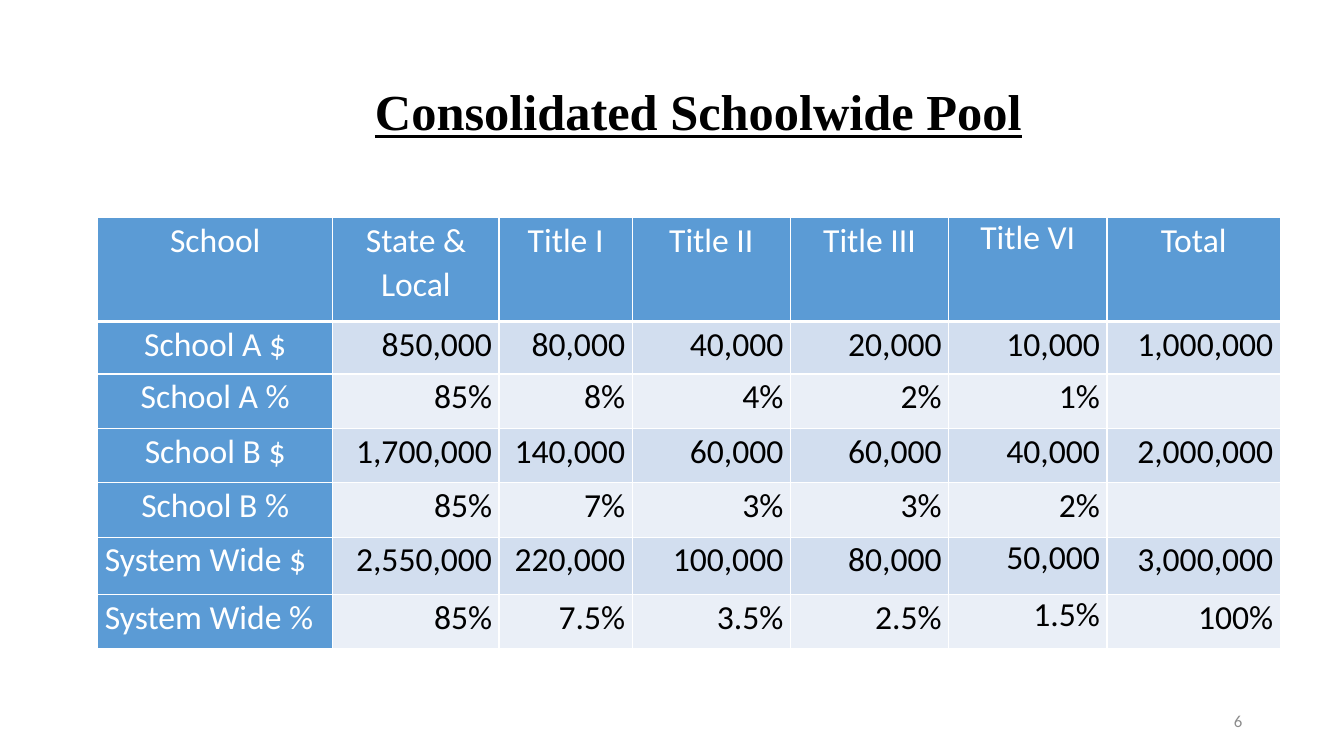
import dataclasses

import lxml.etree
import pptx
import pptx.dml.color
import pptx.enum.text
import pptx.oxml.ns
import pptx.util

Inches = pptx.util.Inches
Pt = pptx.util.Pt
Align = pptx.enum.text.PP_ALIGN
Anchor = pptx.enum.text.MSO_ANCHOR

BLUE, WHITE, BLACK = "5B9BD5", "FFFFFF", "000000"
BANDS = ("D2DEEF", "EAEFF7")
WIDTHS = (2.33, 1.65, 1.32, 1.57, 1.57, 1.57, 1.72)
HEIGHTS = (1.03, 0.52, 0.54, 0.54, 0.54, 0.57, 0.54)
ROWS = (
    ("School", "State & Local", "Title I", "Title II", "Title III", "Title VI", "Total"),
    ("School A $", "850,000", "80,000", "40,000", "20,000", "10,000", "1,000,000"),
    ("School A %", "85%", "8%", "4%", "2%", "1%", ""),
    ("School B $", "1,700,000", "140,000", "60,000", "60,000", "40,000", "2,000,000"),
    ("School B %", "85%", "7%", "3%", "3%", "2%", ""),
    ("System Wide $", "2,550,000", "220,000", "100,000", "80,000", "50,000", "3,000,000"),
    ("System Wide %", "85%", "7.5%", "3.5%", "2.5%", "1.5%", "100%"),
)
# Cells set with single line spacing
TIGHT = {(0, 5), (5, 5), (6, 5)}


@dataclasses.dataclass
class Style:
    size: float
    color: str
    font: str = "Calibri"
    bold: bool = False
    line: bool = False


@dataclasses.dataclass
class Label:
    text: str
    box: tuple[float, float, float, float]
    style: Style
    align: Align
    anchor: Anchor
    wrap: bool


LABELS = (
    Label("Consolidated Schoolwide Pool", (3.62, 0.75, 6.68, 0.71),
          Style(36, BLACK, "Times New Roman", True, True), Align.LEFT, Anchor.TOP, False),
    Label("6", (9.42, 6.95, 3, 0.4), Style(12, "8C8C8C"), Align.RIGHT, Anchor.MIDDLE, True),
)


def color(code: str) -> pptx.dml.color.RGBColor:
    return pptx.dml.color.RGBColor.from_string(code)


def write(para, text: str, style: Style, align: Align) -> None:
    para.alignment = align
    run = para.add_run()
    run.text = text
    font = run.font
    font.size, font.name = Pt(style.size), style.font
    font.bold, font.underline = style.bold, style.line
    font.color.rgb = color(style.color)


def border(cell, base: float) -> None:
    """Add white edges; base is the width of the bottom one."""
    props = cell._tc.get_or_add_tcPr()
    qn = pptx.oxml.ns.qn
    sides = (("lnL", 1), ("lnR", 1), ("lnT", 1), ("lnB", base))
    for spot, (side, width) in enumerate(sides):
        edge = lxml.etree.Element(qn("a:" + side), w=str(Pt(width)))
        fill = lxml.etree.SubElement(edge, qn("a:solidFill"))
        lxml.etree.SubElement(fill, qn("a:srgbClr"), val=WHITE)
        props.insert(spot, edge)


def fill(cell, row: int, col: int, text: str) -> None:
    head = row == 0 or col == 0
    cell.fill.solid()
    cell.fill.fore_color.rgb = color(BLUE if head else BANDS[(row - 1) % 2])
    border(cell, 3 if row == 0 else 1)
    if not text:
        return
    cell.margin_left = cell.margin_right = Inches(0.07)
    cell.margin_top = cell.margin_bottom = 0
    para = cell.text_frame.paragraphs[0]
    if (row, col) not in TIGHT:
        para.line_spacing = 1.07
        para.space_after = Pt(8)
    if not head:
        align = Align.RIGHT
    else:
        align = Align.LEFT if text.startswith("System") else Align.CENTER
    write(para, text, Style(24, WHITE if head else BLACK), align)


def grid(slide) -> None:
    frame = slide.shapes.add_table(
        len(ROWS), len(WIDTHS), Inches(0.97), Inches(2.16),
        Inches(sum(WIDTHS)), Inches(sum(HEIGHTS)))
    table = frame.table
    for col, width in zip(table.columns, WIDTHS):
        col.width = Inches(width)
    for row, height in zip(table.rows, HEIGHTS):
        row.height = Inches(height)
    for row, texts in enumerate(ROWS):
        for col, text in enumerate(texts):
            fill(table.cell(row, col), row, col, text)


def label(slide, item: Label) -> None:
    frame = slide.shapes.add_textbox(*map(Inches, item.box)).text_frame
    frame.word_wrap = item.wrap
    frame.vertical_anchor = item.anchor
    write(frame.paragraphs[0], item.text, item.style, item.align)


def main() -> None:
    deck = pptx.Presentation()
    deck.slide_width, deck.slide_height = Inches(13.33), Inches(7.5)
    slide = deck.slides.add_slide(deck.slide_layouts[6])
    # Table of funds, then title and page number
    grid(slide)
    for item in LABELS:
        label(slide, item)
    deck.save("out.pptx")


if __name__ == "__main__":
    main()
